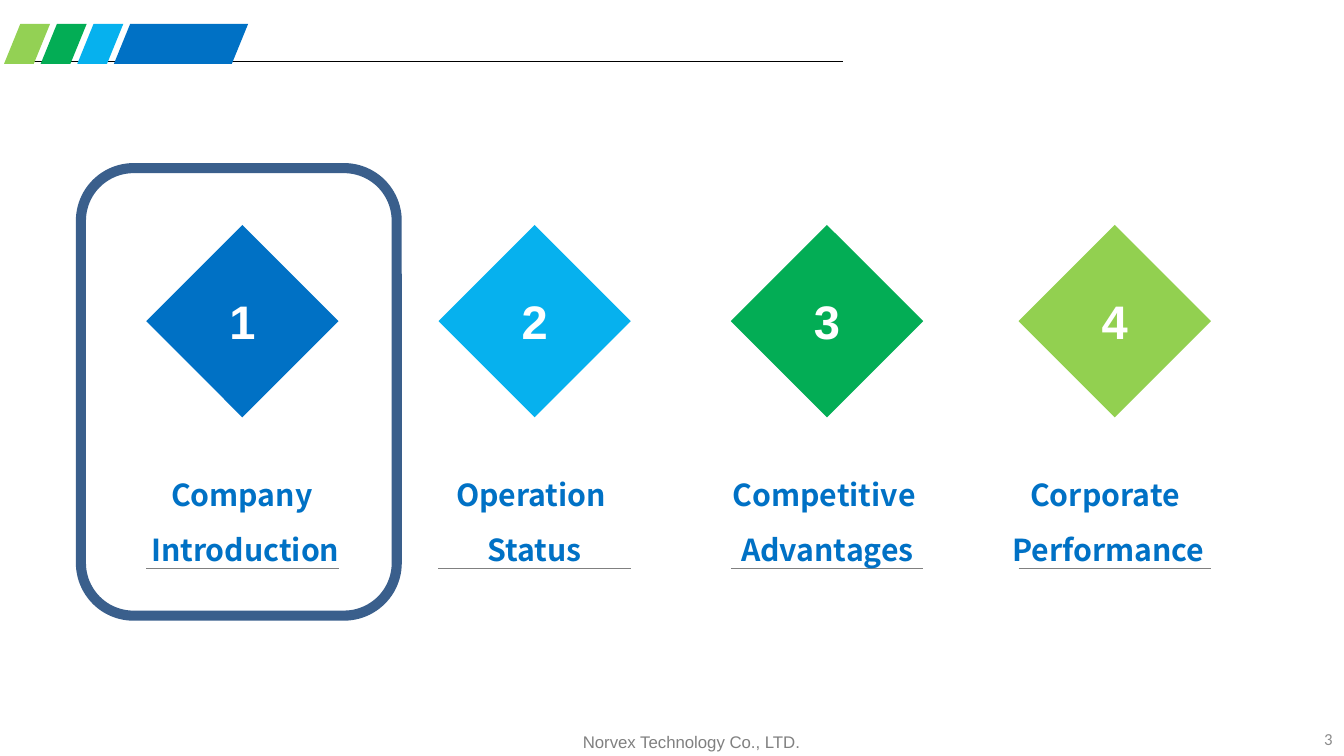
from pptx import Presentation
from pptx.dml.color import RGBColor
from pptx.enum.shapes import MSO_CONNECTOR, MSO_SHAPE
from pptx.enum.text import MSO_ANCHOR, PP_ALIGN
from pptx.oxml.ns import qn
from pptx.util import Pt

STRAIGHT = MSO_CONNECTOR.STRAIGHT
DIAMOND, PARALLELOGRAM = MSO_SHAPE.DIAMOND, MSO_SHAPE.PARALLELOGRAM
ROUNDED = MSO_SHAPE.ROUNDED_RECTANGLE
TOP, MIDDLE = MSO_ANCHOR.TOP, MSO_ANCHOR.MIDDLE
CENTER, RIGHT = PP_ALIGN.CENTER, PP_ALIGN.RIGHT

COLORS = {
    "blue": "0071C5", "sky": "06B1EE", "green": "03AD55", "lime": "93D154",
    "leaf": "92D050", "frame": "3A5F8C", "black": "000000", "white": "FFFFFF",
    "rule": "808080", "page": "8C8C8C",
}

# Diamond left, colour, caption centre, caption lines
SECTIONS = [
    (87, "blue", 146, ["Company ", "Introduction"]),
    (261, "sky", 318.2, ["Operation ", "Status"]),
    (435, "green", 492.6, ["Competitive ", "Advantages"]),
    (606.3, "leaf", 659.8, ["Corporate ", "Performance"]),
]
HEADER_BARS = [("lime", 27.4), ("green", 27.4), ("sky", 27.4), ("blue", 79.9)]
FOOTER = "Norvex Technology Co., LTD."
PAGE_NUMBER = "3"

DIAMOND_TOP, DIAMOND_SIZE = 133.9, 114.5
CAPTION_TOP, CAPTION_WIDTH, CAPTION_HEIGHT = 269.3, 130, 69
RULE_Y = 338.2
BAR_LEFT, BAR_TOP, BAR_HEIGHT, BAR_PITCH, BAR_SLANT = 2.4, 14.2, 23.8, 21.8, 9.7

NUMBER_FONT = {"name": "Arial", "size": Pt(28), "bold": True}
CAPTION_FONT = {"name": "Noto Sans CJK SC", "size": Pt(18), "bold": True}
FOOTER_FONT = {"name": "Arial", "size": Pt(10)}
PAGE_FONT = {"name": "Calibri", "size": Pt(10)}


def color(name):
    return RGBColor.from_string(COLORS[name])


def write(shape, lines, font, color_name, align=CENTER, anchor=MIDDLE, wrap=True, spacing=None):
    frame = shape.text_frame
    frame.word_wrap = wrap
    frame.vertical_anchor = anchor
    for index, line in enumerate(lines):
        paragraph = frame.add_paragraph() if index else frame.paragraphs[0]
        paragraph.alignment = align
        paragraph.line_spacing = spacing
        run = paragraph.add_run()
        run.text = line
        for attribute, value in font.items():
            setattr(run.font, attribute, value)
        run.font.color.rgb = color(color_name)


def add_text(slide, box, *args, **options):
    write(slide.shapes.add_textbox(*map(Pt, box)), *args, **options)


def add_filled(slide, kind, box, color_name):
    shape = slide.shapes.add_shape(kind, *map(Pt, box))
    shape.shadow.inherit = False
    shape.fill.solid()
    shape.fill.fore_color.rgb = color(color_name)
    shape.line.fill.background()
    return shape


def add_rule(slide, left, right, y, color_name):
    rule = slide.shapes.add_connector(STRAIGHT, Pt(left), Pt(y), Pt(right), Pt(y))
    rule.line.color.rgb = color(color_name)
    rule.line.width = Pt(0.75)
    properties = rule.element.spPr
    properties.append(properties.makeelement(qn("a:effectLst"), {}))


def add_header(slide):
    add_rule(slide, 5, 501.8, 36.7, "black")
    for index, (color_name, width) in enumerate(HEADER_BARS):
        box = (BAR_LEFT + index * BAR_PITCH, BAR_TOP, width, BAR_HEIGHT)
        bar = add_filled(slide, PARALLELOGRAM, box, color_name)
        bar.adjustments[0] = BAR_SLANT / BAR_HEIGHT


def add_section(slide, number, left, color_name, caption_center, caption):
    box = (left, DIAMOND_TOP, DIAMOND_SIZE, DIAMOND_SIZE)
    diamond = add_filled(slide, DIAMOND, box, color_name)
    write(diamond, [str(number)], NUMBER_FONT, "white")
    add_rule(slide, left, left + DIAMOND_SIZE, RULE_Y, "rule")
    caption_box = (caption_center - CAPTION_WIDTH / 2, CAPTION_TOP, CAPTION_WIDTH, CAPTION_HEIGHT)
    add_text(slide, caption_box, caption, CAPTION_FONT, "blue",
             anchor=TOP, wrap=False, spacing=1.5)


def add_highlight(slide):
    highlight = slide.shapes.add_shape(ROUNDED, Pt(48.2), Pt(100.1), Pt(188), Pt(266.4))
    highlight.shadow.inherit = False
    highlight.fill.background()
    highlight.line.color.rgb = color("frame")
    highlight.line.width = Pt(6)


def main():
    presentation = Presentation()
    presentation.slide_width, presentation.slide_height = Pt(800), Pt(450)
    blank_layout = presentation.slide_layouts[6]
    slide = presentation.slides.add_slide(blank_layout)

    add_text(slide, (294.5, 432, 234, 20), [FOOTER], FOOTER_FONT, "rule", anchor=TOP)
    add_header(slide)
    add_text(slide, (765.2, 429.1, 35, 21), [PAGE_NUMBER], PAGE_FONT, "page", align=RIGHT)
    for number, section in enumerate(SECTIONS, start=1):
        add_section(slide, number, *section)
    add_highlight(slide)
    presentation.save("out.pptx")


if __name__ == "__main__":
    main()
